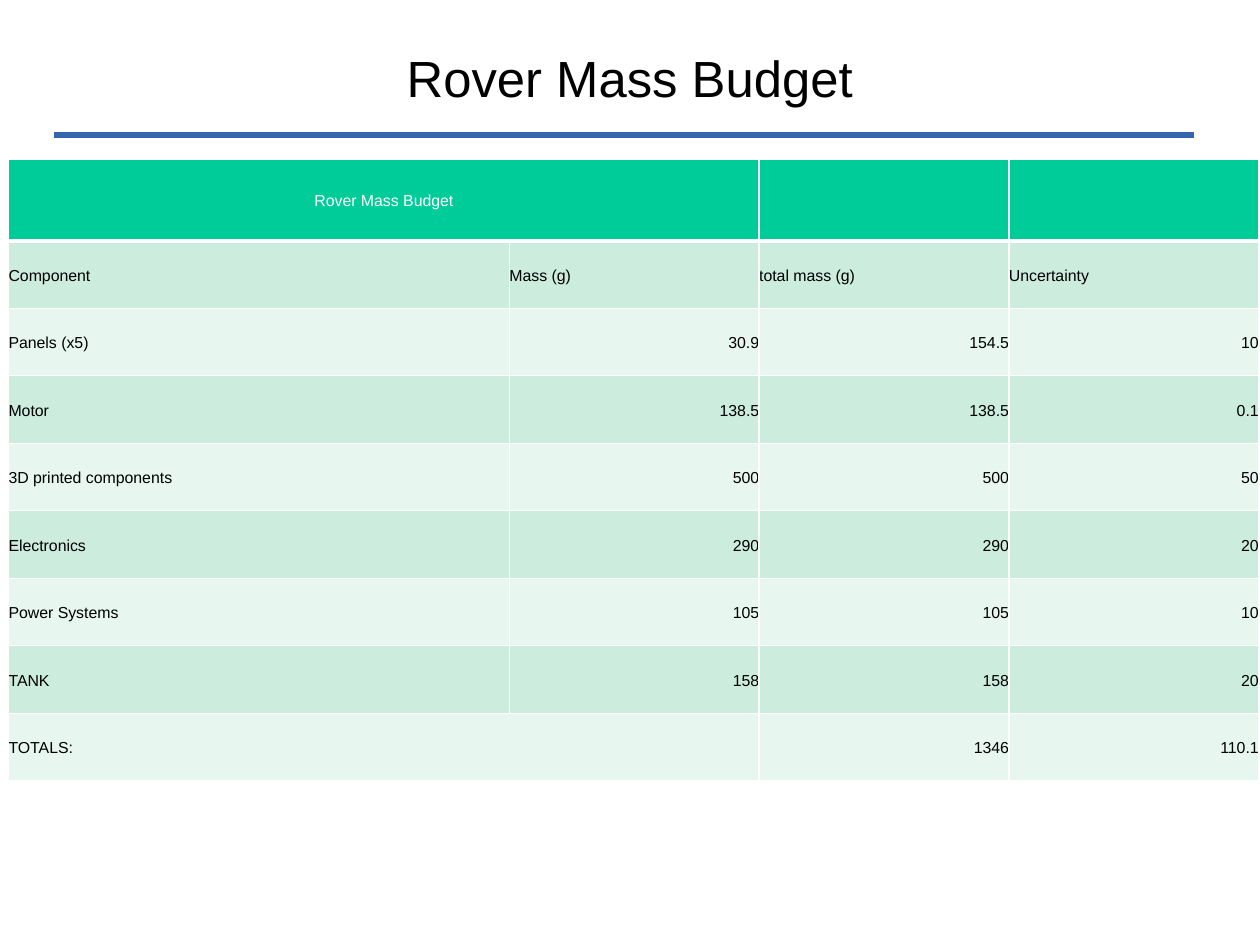
import dataclasses

import lxml.etree
import pptx
import pptx.dml.color
import pptx.enum.text
import pptx.oxml
import pptx.oxml.ns
import pptx.util

Cm = pptx.util.Cm
Pt = pptx.util.Pt
ALIGN = pptx.enum.text.PP_ALIGN
MIDDLE = pptx.enum.text.MSO_ANCHOR.MIDDLE
qn = pptx.oxml.ns.qn


@dataclasses.dataclass(frozen=True)
class Theme:
    font: str = "Arial"
    title: float = 32
    body: float = 10
    black: str = "000000"
    white: str = "FFFFFF"
    rule: str = "3465AF"
    head: str = "00CC99"
    bands: tuple[str, str] = ("CCECDE", "E7F6EF")


@dataclasses.dataclass(frozen=True)
class Row:
    texts: tuple[str, str, str, str]
    merge: bool = False


THEME = Theme()
WIDTHS = (11.13, 5.55, 5.55, 5.55)
HEAD_H, ROW_H = 1.82, 1.5
ROWS = (
    Row(("Rover Mass Budget", "", "", ""), merge=True),
    Row(("Component", "Mass (g)", "total mass (g)", "Uncertainty")),
    Row(("Panels (x5)", "30.9", "154.5", "10")),
    Row(("Motor", "138.5", "138.5", "0.1")),
    Row(("3D printed components", "500", "500", "50")),
    Row(("Electronics", "290", "290", "20")),
    Row(("Power Systems", "105", "105", "10")),
    Row(("TANK", "158", "158", "20")),
    Row(("TOTALS:", "", "1346", "110.1"), merge=True),
)


def paint(code: str) -> pptx.dml.color.RGBColor:
    return pptx.dml.color.RGBColor.from_string(code)


def style(par, size: float, color: str, align, space: float) -> None:
    par.alignment = align
    par.line_spacing = space
    par.font.name = THEME.font
    par.font.size = Pt(size)
    par.font.bold = False
    par.font.color.rgb = paint(color)


def border(cell, base: float) -> None:
    props = cell._tc.get_or_add_tcPr()
    for side, width in (("L", 1), ("R", 1), ("T", 1), ("B", base)):
        line = lxml.etree.SubElement(props, qn(f"a:ln{side}"), w=str(Pt(width)))
        fill = lxml.etree.SubElement(line, qn("a:solidFill"))
        lxml.etree.SubElement(fill, qn("a:srgbClr"), val=THEME.white)


def add_title(slide, text: str) -> None:
    title = slide.shapes.title
    title.left, title.top = Cm(1.4), Cm(0.84)
    title.width, title.height = Cm(25.2), Cm(1.83)
    frame = title.text_frame
    frame.text = text
    frame.word_wrap = True
    frame.auto_size = pptx.enum.text.MSO_AUTO_SIZE.NONE
    frame.vertical_anchor = MIDDLE
    frame.margin_left = frame.margin_right = frame.margin_bottom = 0
    frame.margin_top = Cm(0.08)
    style(frame.paragraphs[0], THEME.title, THEME.black, ALIGN.CENTER, 0.94)


def add_rule(slide) -> None:
    kind = pptx.enum.shapes.MSO_CONNECTOR.STRAIGHT
    rule = slide.shapes.add_connector(kind, Cm(1.19), Cm(3), Cm(26.54), Cm(3))
    rule.line.color.rgb = paint(THEME.rule)
    rule.line.width = Pt(4.31)
    lxml.etree.SubElement(rule._element.spPr, qn("a:effectLst"))


def fill_cell(cell, text: str, row: int, col: int) -> None:
    head = row == 0
    border(cell, 3 if head else 1)
    cell.fill.solid()
    cell.fill.fore_color.rgb = paint(THEME.head if head else THEME.bands[(row - 1) % 2])
    cell.margin_left = cell.margin_right = cell.margin_top = cell.margin_bottom = 0
    cell.vertical_anchor = MIDDLE
    cell.text = text
    if head:
        align = ALIGN.CENTER
    else:
        align = ALIGN.RIGHT if row > 1 and col > 0 else ALIGN.LEFT
    color = THEME.white if head else THEME.black
    style(cell.text_frame.paragraphs[0], THEME.body, color, align, 1.15)


def add_budget(slide) -> None:
    high = HEAD_H + ROW_H * (len(ROWS) - 1)
    table = slide.shapes.add_table(
        len(ROWS), len(WIDTHS), Cm(0.19), Cm(3.53), Cm(sum(WIDTHS)), Cm(high)
    ).table
    table.first_row = table.horz_banding = False
    for column, width in zip(table.columns, WIDTHS):
        column.width = Cm(width)
    for r, row in enumerate(ROWS):
        table.rows[r].height = Cm(ROW_H if r else HEAD_H)
        for c, text in enumerate(row.texts):
            fill_cell(table.cell(r, c), text, r, c)
        if row.merge:
            table.cell(r, 0).merge(table.cell(r, 1))


def main() -> None:
    deck = pptx.Presentation()
    deck.slide_width, deck.slide_height = Cm(28), Cm(21)
    slide = deck.slides.add_slide(deck.slide_layouts.get_by_name("Title Only"))
    # Heading and its rule
    add_rule(slide)
    add_title(slide, "Rover Mass Budget")
    # Mass table
    add_budget(slide)
    deck.save("out.pptx")


if __name__ == "__main__":
    main()
